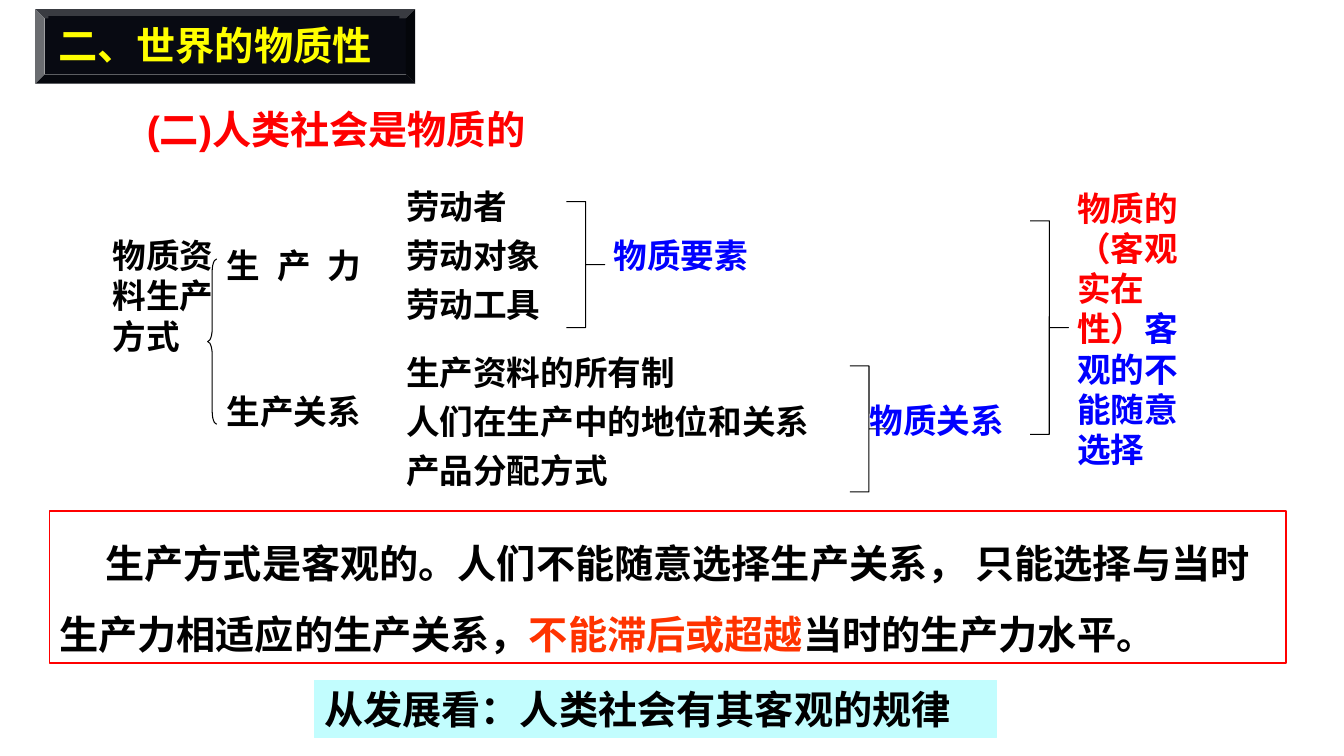
"""Build the slide on the material nature of human society."""
from dataclasses import dataclass

from pptx import Presentation, util as u
from pptx.dml.color import RGBColor
from pptx.enum import shapes, text

Pt = u.Pt
KIND = shapes.MSO_SHAPE


@dataclass(frozen=True)
class Theme:
    """Colours, fonts and type sizes of the slide."""
    black: str = "000000"
    white: str = "FFFFFF"
    navy: str = "080A12"
    yellow: str = "FFFF00"
    red: str = "FF0000"
    orange: str = "FF3300"
    blue: str = "0000FF"
    cyan: str = "C2FDFE"
    latin: str = "Arial"
    cjk: str = "Noto Sans CJK SC"
    large: int = 28
    body: int = 24
    leading: float = 1.2


T = Theme()


def write(sp, runs, size=T.body, font=T.latin, leading=T.leading, indent=0, tracking=0):
    """Fill a shape with one bold paragraph of (wording, colour) runs."""
    tf = sp.text_frame
    tf.word_wrap = True
    tf.auto_size = text.MSO_AUTO_SIZE.SHAPE_TO_FIT_TEXT
    tf.vertical_anchor = text.MSO_ANCHOR.TOP
    p = tf.paragraphs[0]
    p.alignment = text.PP_ALIGN.LEFT
    p.line_spacing = Pt(round(size * leading, 1))
    if indent:
        p._p.get_or_add_pPr().set("indent", str(Pt(indent)))
    p.font.size, p.font.name, p.font.bold = Pt(size), font, True
    for wording, colour in runs:
        r = p.add_run()
        r.text = wording
        r.font.color.rgb = RGBColor.from_string(colour)
        if tracking:
            r._r.get_or_add_rPr().set("spc", str(tracking))


def add_label(s, box, *runs, **style):
    """Add a text box holding the given runs."""
    write(s.shapes.add_textbox(*map(Pt, box)), runs, **style)


def add_panel(s, kind, box, fill=None, line=None, width=0.75):
    """Add a preset shape with an optional fill and outline."""
    sp = s.shapes.add_shape(kind, *map(Pt, box))
    sp.shadow.inherit = False
    if fill:
        sp.fill.solid()
        sp.fill.fore_color.rgb = RGBColor.from_string(fill)
    else:
        sp.fill.background()
    if line:
        sp.line.color.rgb = RGBColor.from_string(line)
        sp.line.width = Pt(width)
    else:
        sp.line.fill.background()
    return sp


def add_brace(s, kind, box, curl=0):
    """Add a thin brace whose point sits halfway down."""
    sp = add_panel(s, kind, box, line=T.black)
    sp.adjustments[0], sp.adjustments[1] = curl, 0.5


def add_factors(s, top, factors):
    """Stack the factors of one branch at an even pitch."""
    for i, (wording, width) in enumerate(factors):
        add_label(s, (283, top + 34.9 * i, width, 36), (wording, T.black))


def add_headings(s):
    """Add the bevelled title and the section heading."""
    add_panel(s, KIND.BEVEL, (25.2, 6.5, 271.4, 53.3), T.navy)
    title = add_panel(s, KIND.RECTANGLE, (34.6, 11.5, 250.6, 41), T.navy)
    write(title, [("二、世界的物质性", T.yellow)], T.large, T.cjk)
    add_label(s, (97.9, 72, 300.2, 41), ("(二)人类社会是物质的", T.red), size=T.large)


def add_diagram(s):
    """Add the tree of the mode of production with its braces."""
    add_label(s, (154.8, 171.4, 141.8, 36), ("生 产 力", T.black), tracking=333)
    add_label(s, (154.8, 275.8, 155.5, 36), ("生产关系", T.black))
    add_factors(s, 129.6, [("劳动者", 182), ("劳动对象", 210), ("劳动工具", 196)])
    add_factors(s, 247.7, [("生产资料的所有制", 365),
                           ("人们在生产中的地位和关系", 412),
                           ("产品分配方式", 310)])
    for left, top, height in ((404.6, 144, 90), (607, 261.4, 90), (735.8, 157.7, 152.6)):
        add_brace(s, KIND.RIGHT_BRACE, (left, top, 27.4, height))
    add_label(s, (431.3, 164.2, 141.8, 36), ("物质要素", T.blue))
    add_label(s, (614.2, 282.2, 141.8, 36), ("物质关系", T.blue))
    add_label(s, (762.5, 130.3, 101.5, 181.4),
              ("物质的（客观实在性）", T.red), ("客观的不能随意选择", T.blue))
    add_label(s, (73.4, 164.2, 87.8, 94.3), ("物质资料生产方式", T.black), font=T.cjk)
    add_brace(s, KIND.LEFT_BRACE, (148.3, 185, 6.5, 118.1), 1.41)


def add_conclusions(s):
    """Add the framed statement and the closing line."""
    statement = add_panel(s, KIND.RECTANGLE, (35.3, 365, 883.4, 108.7), T.white, T.red, 1)
    write(statement, [
        ("生产方式是客观的。人们不能随意选择生产关系， 只能选择与当时生产力相适应的生产关系，", T.black),
        ("不能滞后或超越", T.orange),
        ("当时的生产力水平。", T.black),
    ], T.large, T.cjk, leading=1.5 * T.leading, indent=33)
    closing = add_panel(s, KIND.RECTANGLE, (224.6, 486, 487.4, 41), T.cyan, T.cyan)
    write(closing, [("从发展看：人类社会有其客观的规律", T.black)], T.large, T.cjk)


def main():
    """Create the presentation and save it."""
    prs = Presentation()
    prs.slide_width, prs.slide_height = Pt(960), Pt(540)
    s = prs.slides.add_slide(prs.slide_layouts[6])
    add_headings(s)
    add_diagram(s)
    add_conclusions(s)
    prs.save("out.pptx")


if __name__ == "__main__":
    main()
